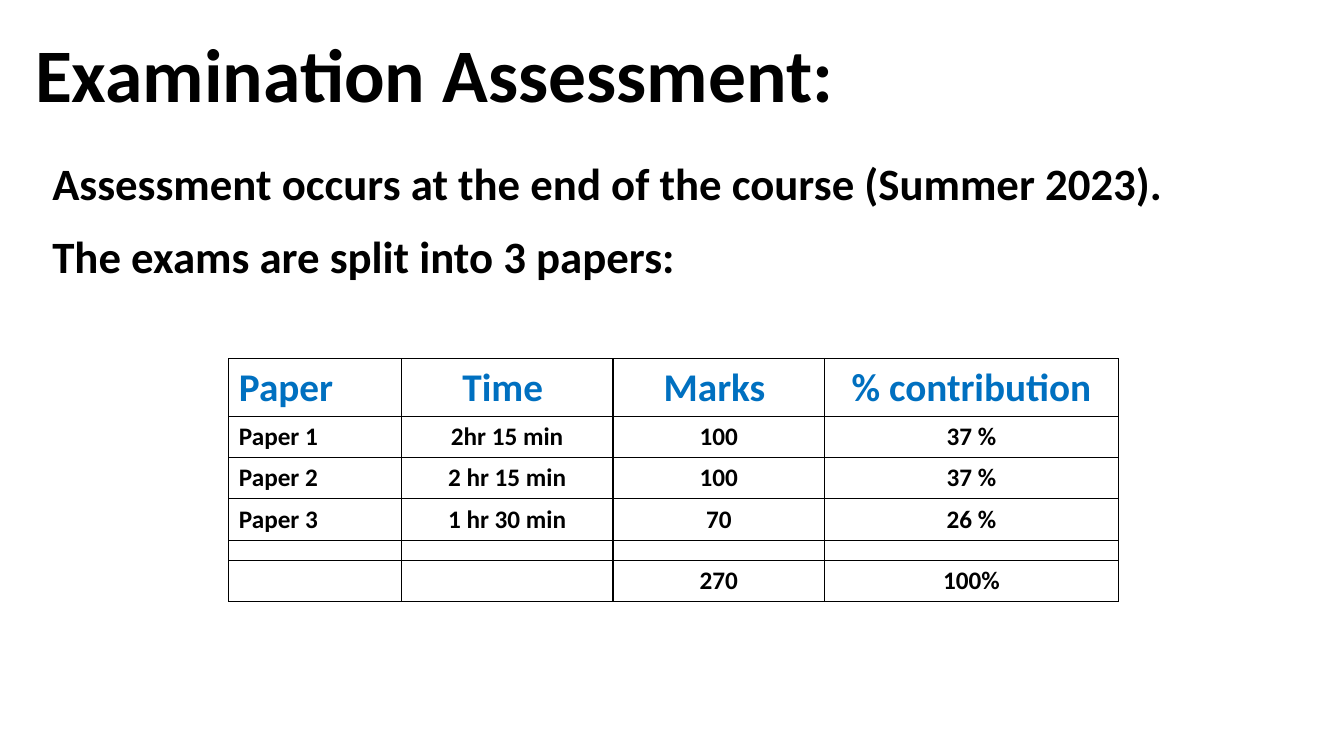
from lxml import etree
from pptx import Presentation
from pptx.dml.color import RGBColor
from pptx.enum import text
from pptx.oxml import ns
from pptx.util import Inches, Pt

BLACK = RGBColor(0x00, 0x00, 0x00)
BLUE = RGBColor(0x00, 0x70, 0xC0)
WHITE = RGBColor(0xFF, 0xFF, 0xFF)

HEADINGS = ["Paper", "Time ", "Marks ", "% contribution"]
PAPERS = [
    ["Paper 1", "2hr 15 min", "100", "37 %"],
    ["Paper 2", "2 hr 15 min", "100", "37 %"],
    ["Paper 3", "1 hr 30 min", "70", "26 %"],
]
GAP = [""] * 4
TOTALS = ["", "", "270", "100%"]
COLUMN_WIDTHS = [1.71, 2.1, 2.1, 2.91]


def add_line(parent, fill, width):
    """Append a solid line element; fill is an RGBColor, width is in points."""
    line = etree.SubElement(parent, ns.qn(parent.tag_name), w=str(Pt(width))) \
        if hasattr(parent, "tag_name") else etree.SubElement(parent, ns.qn("a:ln"), w=str(Pt(width)))
    solid = etree.SubElement(line, ns.qn("a:solidFill"))
    etree.SubElement(solid, ns.qn("a:srgbClr"), val=str(fill))
    return line


def write(paragraph, words, size, colour=BLACK):
    run = paragraph.add_run()
    run.text = words
    for name, value in {"name": "Calibri", "size": Pt(size), "bold": True}.items():
        setattr(run.font, name, value)
    run.font.color.rgb = colour
    return run


def add_text_frame(slide, left, top, width, height, wrap):
    box = slide.shapes.add_textbox(Inches(left), Inches(top), Inches(width), Inches(height))
    box.text_frame.word_wrap = wrap
    return box.text_frame


def add_title(slide, left, top, width, height):
    title = add_text_frame(slide, left, top, width, height, False).paragraphs[0]
    title.alignment = text.PP_ALIGN.CENTER
    properties = write(title, "Examination Assessment:", 54).font._element
    properties.insert(0, add_line(properties, WHITE, 0.75))


def add_summary(slide, left, top, width, height):
    summary = add_text_frame(slide, left, top, width, height, True)
    write(summary.paragraphs[0], "Assessment occurs at the end of the course (Summer 2023).", 32)
    split = summary.add_paragraph()
    split.space_before = Pt(13.4)
    write(split, "The exams are split into 3 papers:", 32)


def add_borders(cell):
    properties = cell._tc.get_or_add_tcPr()
    for index, side in enumerate(("a:lnL", "a:lnR", "a:lnT", "a:lnB")):
        border = add_line(properties, BLACK, 1)
        border.tag = ns.qn(side)
        properties.insert(index, border)


def fill_cell(cell, words, size, colour, alignment):
    cell.fill.solid()
    cell.fill.fore_color.rgb = WHITE
    cell.vertical_anchor = text.MSO_ANCHOR.MIDDLE
    add_borders(cell)
    paragraph = cell.text_frame.paragraphs[0]
    paragraph.alignment = alignment
    if words:
        write(paragraph, words, size, colour)
    else:
        etree.SubElement(paragraph._p, ns.qn("a:endParaRPr"), sz=str(size * 100))


def add_papers_table(slide, left, top, width, height):
    # Each row: words, height in inches, text size, colour
    rows = [(HEADINGS, 0.57, 28, BLUE)]
    rows += [(paper, 0.41, 18, BLACK) for paper in PAPERS]
    rows += [(GAP, 0.2, 6, BLACK), (TOTALS, 0.41, 18, BLACK)]
    table = slide.shapes.add_table(len(rows), len(HEADINGS), Inches(left), Inches(top),
                                   Inches(width), Inches(height)).table
    table.first_row = table.horz_banding = False
    for column, column_width in zip(table.columns, COLUMN_WIDTHS):
        column.width = Inches(column_width)
    for row, (entries, row_height, size, colour) in zip(table.rows, rows):
        row.height = Inches(row_height)
        for index, (cell, words) in enumerate(zip(row.cells, entries)):
            alignment = text.PP_ALIGN.CENTER if index else text.PP_ALIGN.LEFT
            fill_cell(cell, words, size, colour, alignment)


def main():
    deck = Presentation()
    deck.slide_width, deck.slide_height = Inches(13.33), Inches(7.5)
    slide = deck.slides.add_slide(deck.slide_layouts[6])
    add_title(slide, 0.21, 0.22, 8.2, 1.01)
    add_summary(slide, 0.42, 1.5, 11.92, 4.7)
    add_papers_table(slide, 2.27, 3.56, 8.83, 2.39)
    deck.save("out.pptx")


if __name__ == "__main__":
    main()
